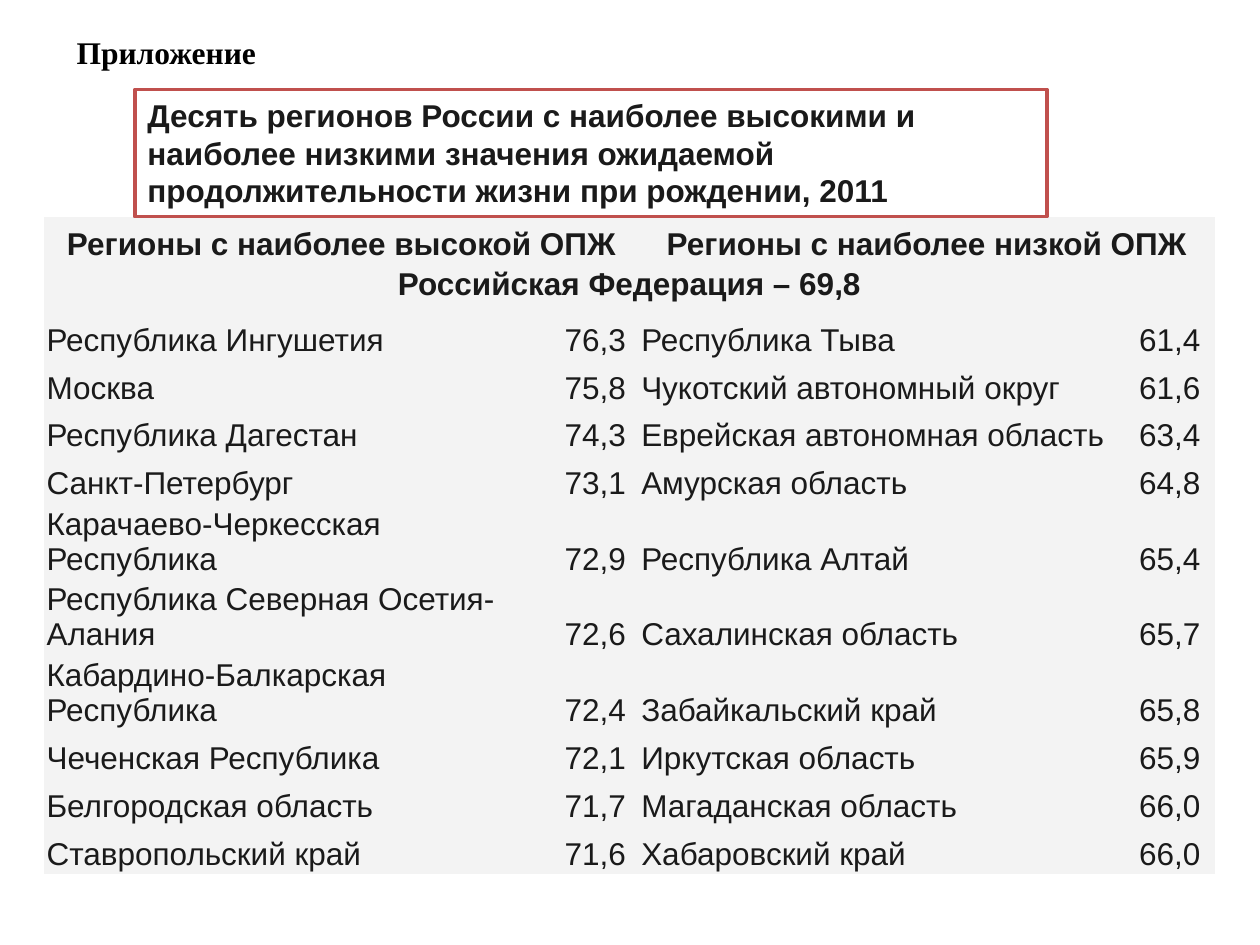
from pptx import Presentation
from pptx.dml.color import RGBColor
from pptx.enum.text import MSO_ANCHOR as ANCHOR, MSO_AUTO_SIZE as AUTO, PP_ALIGN as ALIGN
from pptx.oxml.ns import qn
from pptx.util import Inches, Pt

INK = "1A1A1A"
NO_STYLE_NO_GRID = "{2D5ABB26-0587-4C30-8999-92F81FD0307C}"
REGIONS = [
    ("Республика Ингушетия", "76,3", "Республика Тыва", "61,4"),
    ("Москва", "75,8", "Чукотский автономный округ", "61,6"),
    ("Республика Дагестан", "74,3", "Еврейская автономная область", "63,4"),
    ("Санкт-Петербург", "73,1", "Амурская область", "64,8"),
    ("Карачаево-Черкесская Республика", "72,9", "Республика Алтай", "65,4"),
    ("Республика Северная Осетия-Алания", "72,6", "Сахалинская область", "65,7"),
    ("Кабардино-Балкарская Республика", "72,4", "Забайкальский край", "65,8"),
    ("Чеченская Республика", "72,1", "Иркутская область", "65,9"),
    ("Белгородская область", "71,7", "Магаданская область", "66,0"),
    ("Ставропольский край", "71,6", "Хабаровский край", "66,0"),
]
ROWS = [
    ("Регионы с наиболее высокой ОПЖ", "", "Регионы с наиболее низкой ОПЖ", ""),
    ("Российская Федерация – 69,8", "", "", ""),
] + REGIONS
COL_WIDTHS = [4.03, 0.69, 3.86, 0.71]
ROW_HEIGHT = 0.38


def rgb(color):
    return RGBColor.from_string(color)


def write(tf, text, bold, align=ALIGN.LEFT, font="Arial", color=INK):
    """Put one 18 pt run into the first paragraph of a text frame."""
    p = tf.paragraphs[0]
    p.alignment = align
    r = p.add_run()
    r.text = text
    r.font.size = Pt(18)
    r.font.name = font
    r.font.bold = bold
    r.font.color.rgb = rgb(color)


prs = Presentation()
prs.slide_width, prs.slide_height = Inches(10), Inches(7.5)
s = prs.slides.add_slide(prs.slide_layouts[5])

# Table of regions
frame = s.shapes.add_table(len(ROWS), len(COL_WIDTHS), Inches(0.35), Inches(1.72),
                           Inches(sum(COL_WIDTHS)), Inches(ROW_HEIGHT * len(ROWS)))
table = frame.table
table.first_row = table.horz_banding = False
frame._element.find(".//" + qn("a:tableStyleId")).text = NO_STYLE_NO_GRID
for column, width in zip(table.columns, COL_WIDTHS):
    column.width = Inches(width)
for row in table.rows:
    row.height = Inches(ROW_HEIGHT)

table.cell(0, 0).merge(table.cell(0, 1))
table.cell(0, 2).merge(table.cell(0, 3))
table.cell(1, 0).merge(table.cell(1, 3))
for i, texts in enumerate(ROWS):
    heading = i < 2
    for j, text in enumerate(texts):
        cell = table.cell(i, j)
        cell.fill.solid()
        cell.fill.fore_color.rgb = rgb("F3F3F3")
        cell.margin_left = cell.margin_right = Inches(0.02)
        cell.margin_top = cell.margin_bottom = Inches(0.02)
        cell.vertical_anchor = ANCHOR.TOP if i == 1 else ANCHOR.BOTTOM
        if text:
            centered = heading or j % 2 == 1
            write(cell.text_frame, text, heading, ALIGN.CENTER if centered else ALIGN.LEFT)

# Framed title, brought in front of the table
title = s.shapes.title
title.left, title.top = Inches(1.07), Inches(0.71)
title.width, title.height = Inches(7.24), Inches(1.01)
title.fill.solid()
title.fill.fore_color.rgb = rgb("FFFFFF")
title.line.color.rgb = rgb("C0504D")
title.line.width = Pt(2)
tf = title.text_frame
tf.word_wrap = True
tf.auto_size = AUTO.NONE
tf.vertical_anchor = ANCHOR.TOP
write(tf, "Десять регионов России с наиболее высокими и наиболее низкими значения "
          "ожидаемой продолжительности жизни при рождении, 2011", True)
s.shapes._spTree.append(title._element)

# Appendix label
label = s.shapes.add_textbox(Inches(0.51), Inches(0.21), Inches(1.7), Inches(0.4))
label.text_frame.word_wrap = False
label.text_frame.auto_size = AUTO.SHAPE_TO_FIT_TEXT
write(label.text_frame, "Приложение", True, font="Times New Roman", color="000000")

prs.save("out.pptx")
